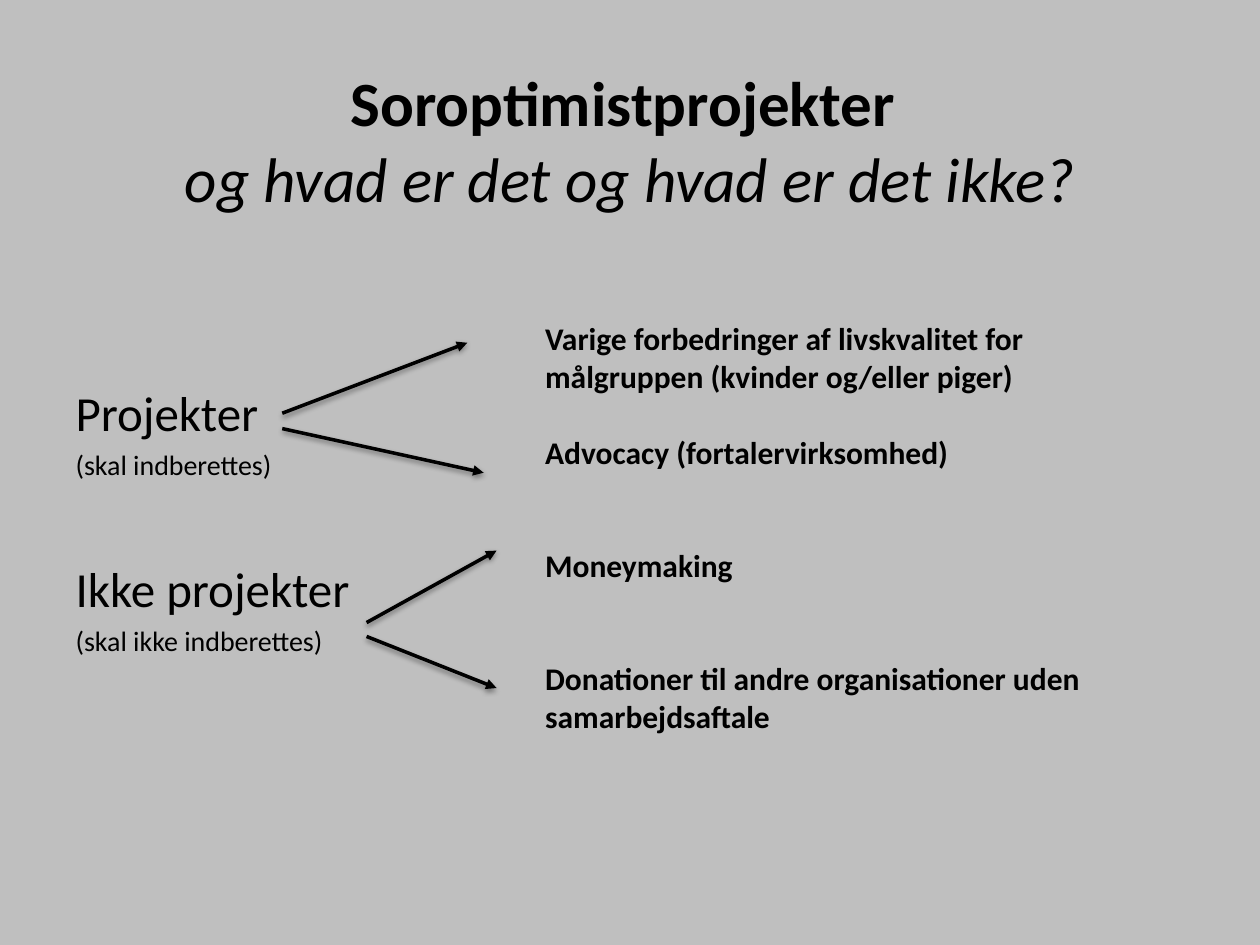
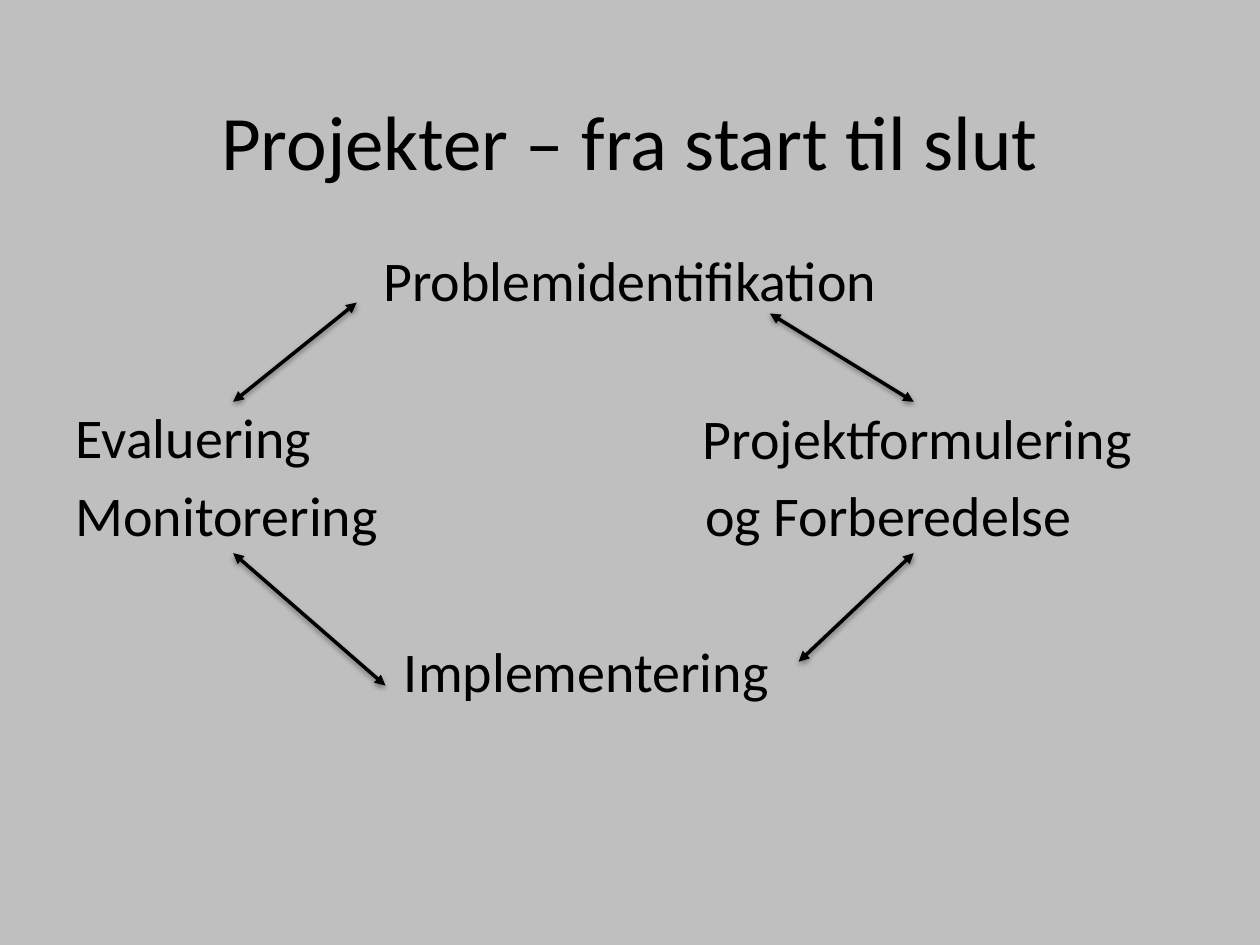
from lxml import etree
from pptx import Presentation
from pptx import util as u
from pptx.dml.color import RGBColor
from pptx.enum import shapes, text
from pptx.oxml import ns

FONT = "Calibri"
COLOURS = {"background": "BFBFBF", "ink": "000000"}
LEFT, WIDTH, BODY_BOTTOM = 1.27, 22.86, 17.4
TITLE_AREA = (LEFT, 1.22, WIDTH, 3.18)
CENTRE = text.PP_ALIGN.CENTER

# Positions are in cm, text sizes and spacing in points.
# Arrows are pairs of end points (x, y).
WHAT_COUNTS = {
    "title": [("Soroptimistprojekter ", {"size": 36, "bold": True}),
              ("og hvad er det og hvad er det ikke?", {"size": 36, "italic": True})],
    "body_top": 7.58,
    "body": [
        {"text": "Projekter", "size": 28},
        {"text": "(skal indberettes)", "size": 16, "before": 3.4},
        {"text": "Ikke projekter", "size": 28, "before": 44.6},
        {"text": "(skal ikke indberettes)", "size": 16, "before": 3.4},
    ],
    "right_area": (10.74, 6.31, 11.53, 8.73),
    "right": [
        {"text": "Varige forbedringer af livskvalitet for målgruppen (kvinder og/eller piger)",
         "size": 18, "bold": True},
        {"text": "Advocacy (fortalervirksomhed)", "size": 18, "bold": True, "before": 22},
        {"text": "Moneymaking", "size": 18, "bold": True, "before": 43},
        {"text": "Donationer til andre organisationer uden samarbejdsaftale",
         "size": 18, "bold": True, "before": 43},
    ],
    "arrows": [((5.69, 8.33), (9.42, 6.91)), ((5.69, 8.64), (9.75, 9.53)),
               ((7.39, 12.55), (10.01, 11.1)), ((7.39, 12.83), (10.01, 13.87))],
    "both_ends": False,
}
PROJECT_CYCLE = {
    "title": [("Projekter – fra start til slut", {"size": 44})],
    "body_top": 4.83,
    "body": [
        {"text": "Problemidentifikation", "size": 32, "align": CENTRE},
        {"text": "Evaluering", "size": 32, "before": 51.2},
        {"text": "Monitorering", "size": 32, "before": 5.8},
        {"text": "Implementering", "size": 32, "before": 51.2, "indent": 6.62},
    ],
    "right_area": (13.92, 8.01, 9.5, 3.2),
    "right": [
        {"text": "Projektformulering", "size": 32},
        {"text": "og Forberedelse", "size": 32, "before": 5.8, "indent": 0.05},
    ],
    "arrows": [((15.52, 6.32), (18.42, 8.1)), ((18.42, 11.15), (16.1, 13.34)),
               ((7.77, 13.82), (4.7, 11.15)), ((4.7, 8.1), (7.19, 6.1))],
    "both_ends": True,
}


def colour(name):
    return RGBColor.from_string(COLOURS[name])


def child(parent, tag, **attributes):
    element = etree.SubElement(parent, ns.qn(tag))
    for key, value in attributes.items():
        element.set(key, str(value))
    return element


def place(shape, area):
    shape.left, shape.top, shape.width, shape.height = map(u.Cm, area)


def add_run(paragraph, words, size, bold=False, italic=False):
    run = paragraph.add_run()
    run.text = words
    run.font.name, run.font.size = FONT, u.Pt(size)
    run.font.bold, run.font.italic = bold, italic
    run.font.color.rgb = colour("ink")


def fill_frame(frame, lines):
    """Write one paragraph per line, without bullets."""
    frame.word_wrap = True
    frame.auto_size = text.MSO_AUTO_SIZE.NONE
    for number, line in enumerate(lines):
        paragraph = frame.add_paragraph() if number else frame.paragraphs[0]
        properties = paragraph._p.get_or_add_pPr()
        properties.set("marL", str(u.Cm(line.get("indent", 0))))
        properties.set("indent", "0")
        child(properties, "a:buNone")
        paragraph.space_before = u.Pt(line.get("before", 0))
        paragraph.alignment = line.get("align", text.PP_ALIGN.LEFT)
        add_run(paragraph, line["text"], line["size"], line.get("bold", False))


def add_arrow(slide, start, end, both_ends):
    arrow = slide.shapes.add_connector(
        shapes.MSO_CONNECTOR.STRAIGHT, *map(u.Cm, start + end))
    arrow.line.color.rgb = colour("ink")
    arrow.line.width = u.Pt(2)
    outline = arrow.line._get_or_add_ln()
    if both_ends:
        child(outline, "a:headEnd", type="triangle")
    child(outline, "a:tailEnd", type="triangle")
    effects = child(arrow._element.spPr, "a:effectLst")
    shadow = child(effects, "a:outerShdw", blurRad=u.Pt(3.1), dist=u.Pt(1.6),
                   dir=90 * 60000, rotWithShape=0)
    shade = child(shadow, "a:srgbClr", val=COLOURS["ink"])
    child(shade, "a:alpha", val=38000)


def add_slide(prs, content):
    slide = prs.slides.add_slide(prs.slide_layouts[1])
    title, body = slide.placeholders
    place(title, TITLE_AREA)
    title.text_frame.auto_size = text.MSO_AUTO_SIZE.NONE
    title.text_frame.vertical_anchor = text.MSO_ANCHOR.MIDDLE
    heading = title.text_frame.paragraphs[0]
    heading.alignment = CENTRE
    for number, (words, style) in enumerate(content["title"]):
        if number:
            heading.add_line_break()
        add_run(heading, words, **style)

    top = content["body_top"]
    place(body, (LEFT, top, WIDTH, BODY_BOTTOM - top))
    fill_frame(body.text_frame, content["body"])
    right = slide.shapes.add_textbox(*map(u.Cm, content["right_area"]))
    fill_frame(right.text_frame, content["right"])
    for start, end in content["arrows"]:
        add_arrow(slide, start, end, content["both_ends"])


def main():
    prs = Presentation()
    prs.slide_width, prs.slide_height = u.Cm(25.4), u.Cm(19.05)
    background = prs.slide_master.background.fill
    background.solid()
    background.fore_color.rgb = colour("background")
    for content in (WHAT_COUNTS, PROJECT_CYCLE):
        add_slide(prs, content)
    prs.save("out.pptx")


if __name__ == "__main__":
    main()
